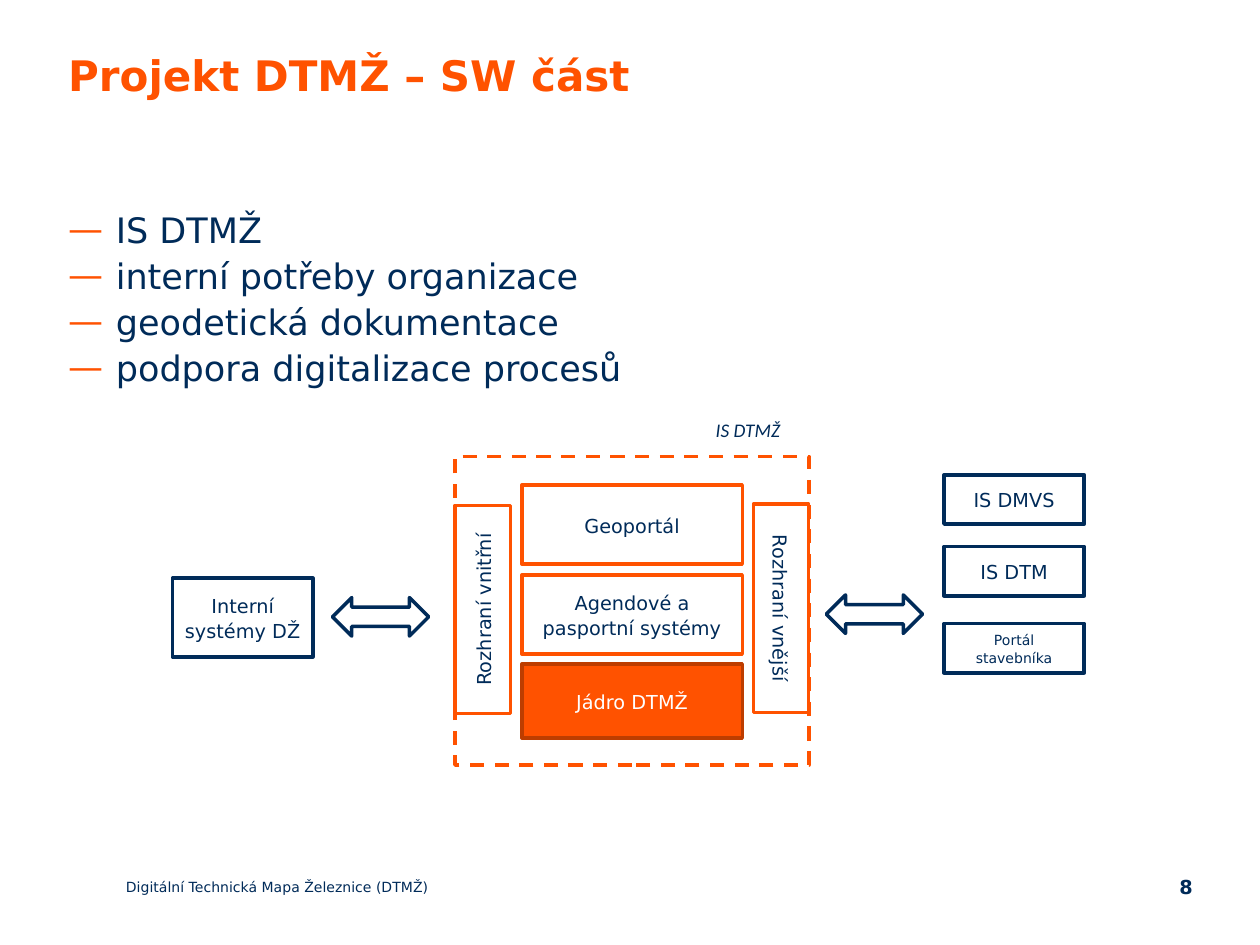
from lxml import etree
from pptx import Presentation
from pptx.dml.color import RGBColor
from pptx.enum import dml, shapes, text
from pptx.oxml.ns import qn
from pptx.util import Pt

ORANGE = RGBColor(0xFF, 0x52, 0x00)
RUST = RGBColor(0xBD, 0x3D, 0x00)
NAVY = RGBColor(0x00, 0x2B, 0x59)
WHITE = RGBColor(0xFF, 0xFF, 0xFF)
BODY_FONT = "DejaVu Sans"


def write(paragraph, wording, size, color=NAVY, bold=False, italic=False, font=BODY_FONT):
    """Add one styled run to a paragraph."""
    run = paragraph.add_run()
    run.text = wording
    run.font.size = Pt(size)
    run.font.name = font
    run.font.bold = bold
    run.font.italic = italic
    run.font.color.rgb = color


def text_frame(canvas, box, anchor=text.MSO_ANCHOR.TOP):
    """Place a wrapping text box without insets and return its frame."""
    frame = canvas.add_textbox(*map(Pt, box)).text_frame
    frame.word_wrap = True
    frame.vertical_anchor = anchor
    frame.margin_left = frame.margin_right = frame.margin_top = frame.margin_bottom = 0
    return frame


def center(paragraph):
    """Apply the diagram's paragraph layout."""
    paragraph.alignment = text.PP_ALIGN.CENTER
    paragraph.line_spacing = 1.06
    paragraph.space_after = Pt(8)


def outlined(canvas, box, line, fill=WHITE, kind=shapes.MSO_SHAPE.RECTANGLE):
    """Place a flat preset shape with a two-point outline."""
    shape = canvas.add_shape(kind, *map(Pt, box))
    shape.shadow.inherit = False
    if fill is None:
        shape.fill.background()
    else:
        shape.fill.solid()
        shape.fill.fore_color.rgb = fill
    shape.line.color.rgb = line
    shape.line.width = Pt(2)
    return shape


def block(canvas, box, label, line, fill=WHITE, color=NAVY, size=11, direction=None):
    """Place a labelled rectangle, optionally with turned text."""
    frame = outlined(canvas, box, line, fill).text_frame
    frame.word_wrap = True
    frame.vertical_anchor = text.MSO_ANCHOR.MIDDLE
    if direction:
        frame._txBody.bodyPr.set("vert", direction)
    center(frame.paragraphs[0])
    write(frame.paragraphs[0], label, size, color)


def title(canvas, box):
    """Write the slide title."""
    write(text_frame(canvas, box).paragraphs[0], "Projekt DTMŽ – SW část", 24, ORANGE, bold=True)


def topics(canvas, box, items):
    """Write the list with orange dashes."""
    frame = text_frame(canvas, box)
    for index, item in enumerate(items):
        paragraph = frame.add_paragraph() if index else frame.paragraphs[0]
        properties = paragraph._p.get_or_add_pPr()
        properties.set("marL", str(Pt(27.2)))
        properties.set("indent", str(-Pt(27.2)))
        bullet_color = etree.SubElement(properties, qn("a:buClr"))
        etree.SubElement(bullet_color, qn("a:srgbClr"), val=str(ORANGE))
        etree.SubElement(properties, qn("a:buFont"), typeface=BODY_FONT)
        etree.SubElement(properties, qn("a:buChar"), char="—")
        if index:
            paragraph.space_before = Pt(2.4)
        write(paragraph, item, 20)


def core_system(canvas, box):
    """Draw the dashed system with its layers and two interfaces."""
    left, top, width, height = box
    frame = outlined(canvas, box, ORANGE, None)
    frame.line.dash_style = dml.MSO_LINE.DASH

    layer_left, layer_width = left + 38.2, 126
    layers = [
        ("Geoportál", 16.4, 45.2, ORANGE, WHITE, NAVY),
        ("Agendové a pasportní systémy", 67.8, 45.2, ORANGE, WHITE, NAVY),
        ("Jádro DTMŽ", 118.6, 42.4, RUST, ORANGE, WHITE),
    ]
    for label, offset, layer_height, line, fill, color in layers:
        block(canvas, (layer_left, top + offset, layer_width, layer_height), label, line, fill, color)

    side = 31.7
    interfaces = [
        ("Rozhraní vnitřní", left, 28, "vert270"),
        ("Rozhraní vnější", left + width - side, 27.3, "vert"),
    ]
    for label, side_left, offset, direction in interfaces:
        block(canvas, (side_left, top + offset, side, 119), label, ORANGE, direction=direction)

    caption = canvas.add_textbox(Pt(left + 138.2), Pt(top - 26), Pt(58.3), Pt(24.5)).text_frame
    caption.word_wrap = False
    center(caption.paragraphs[0])
    write(caption.paragraphs[0], "IS DTMŽ", 11, italic=True, font="Calibri")


def external_systems(canvas, box):
    """Stack the three outside systems."""
    left, top, width, height = box
    systems = [("IS DMVS", 0, 11), ("IS DTM", 41, 11), ("Portál stavebníka", 85, 8)]
    for label, offset, size in systems:
        block(canvas, (left, top + offset, width, height - 85), label, NAVY, size=size)


def diagram(canvas, box):
    """Draw the system between its internal and external partners."""
    left, top = box[:2]
    core_system(canvas, (left + 161.4, top + 26, 202.2, 176.4))
    external_systems(canvas, (left + 440.8, top + 36.5, 80.2, 113.2))
    block(canvas, (left, top + 95.6, 80.2, 45), "Interní systémy DŽ", NAVY)
    for offset, drop in ((91.4, 106.7), (373.6, 105.2)):
        outlined(canvas, (left + offset, top + drop, 55, 22), NAVY,
                 kind=shapes.MSO_SHAPE.LEFT_RIGHT_ARROW)


def footer(canvas, box):
    """Write the running title and the page number."""
    left, top, width, height = box
    middle = text.MSO_ANCHOR.MIDDLE
    running = text_frame(canvas, (left, top, 452, height), middle)
    write(running.paragraphs[0], "Digitální Technická Mapa Železnice (DTMŽ)", 8)
    page = text_frame(canvas, (left + width - 38, top, 38, height), middle).paragraphs[0]
    page.alignment = text.PP_ALIGN.RIGHT
    write(page, "8", 11, bold=True)


def main():
    """Build and save the slide."""
    deck = Presentation()
    deck.slide_width, deck.slide_height = Pt(720), Pt(540)
    slide = deck.slides.add_slide(deck.slide_layouts[6])
    title(slide.shapes, (39, 28, 642, 63))
    topics(slide.shapes, (39, 119, 642, 320), [
        "IS DTMŽ",
        "interní potřeby organizace",
        "geodetická dokumentace",
        "podpora digitalizace procesů",
    ])
    diagram(slide.shapes.add_group_shape().shapes, (98.6, 234.8, 521, 202.4))
    footer(slide.shapes, (72, 498, 609.6, 17.6))
    deck.save("out.pptx")


if __name__ == "__main__":
    main()
